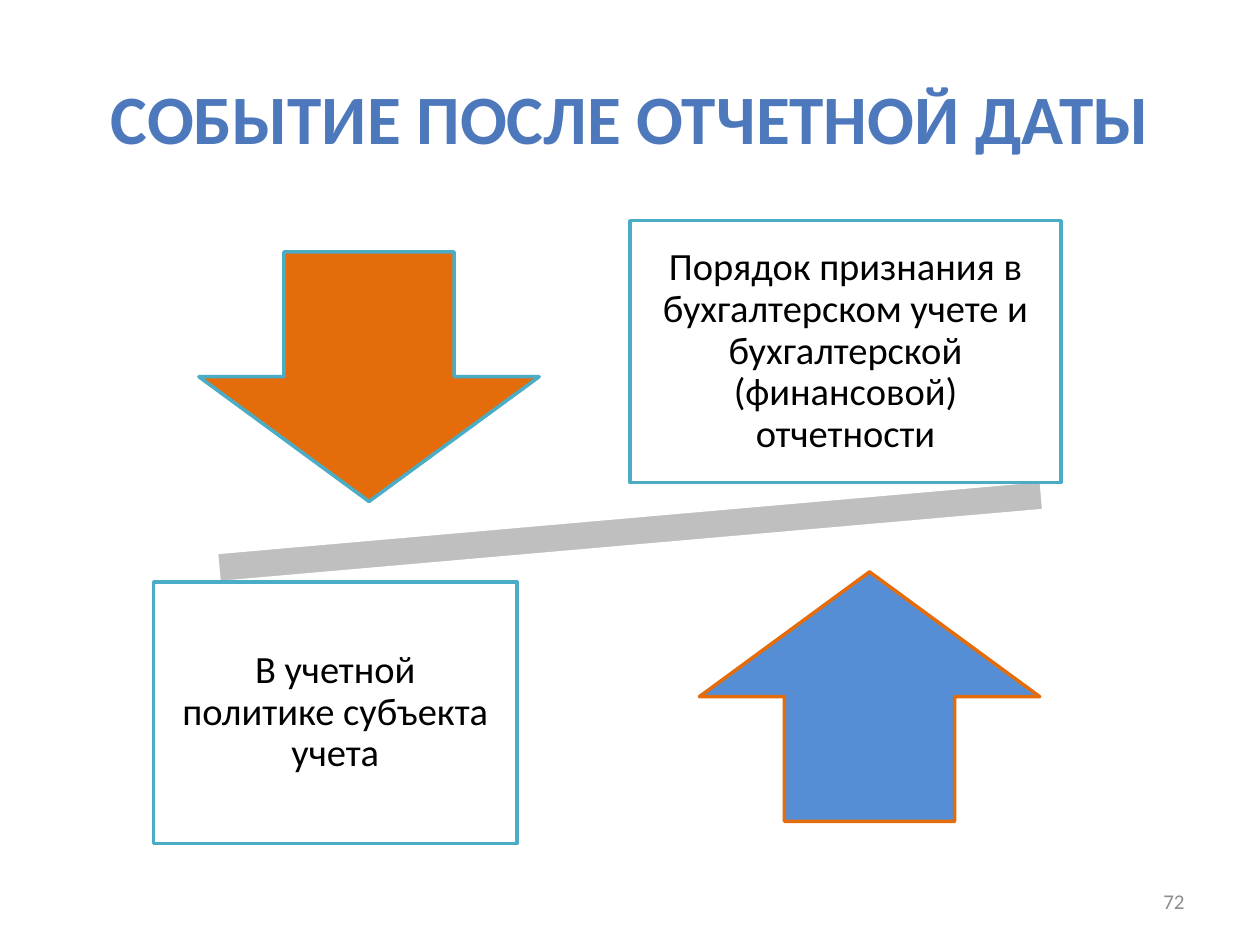
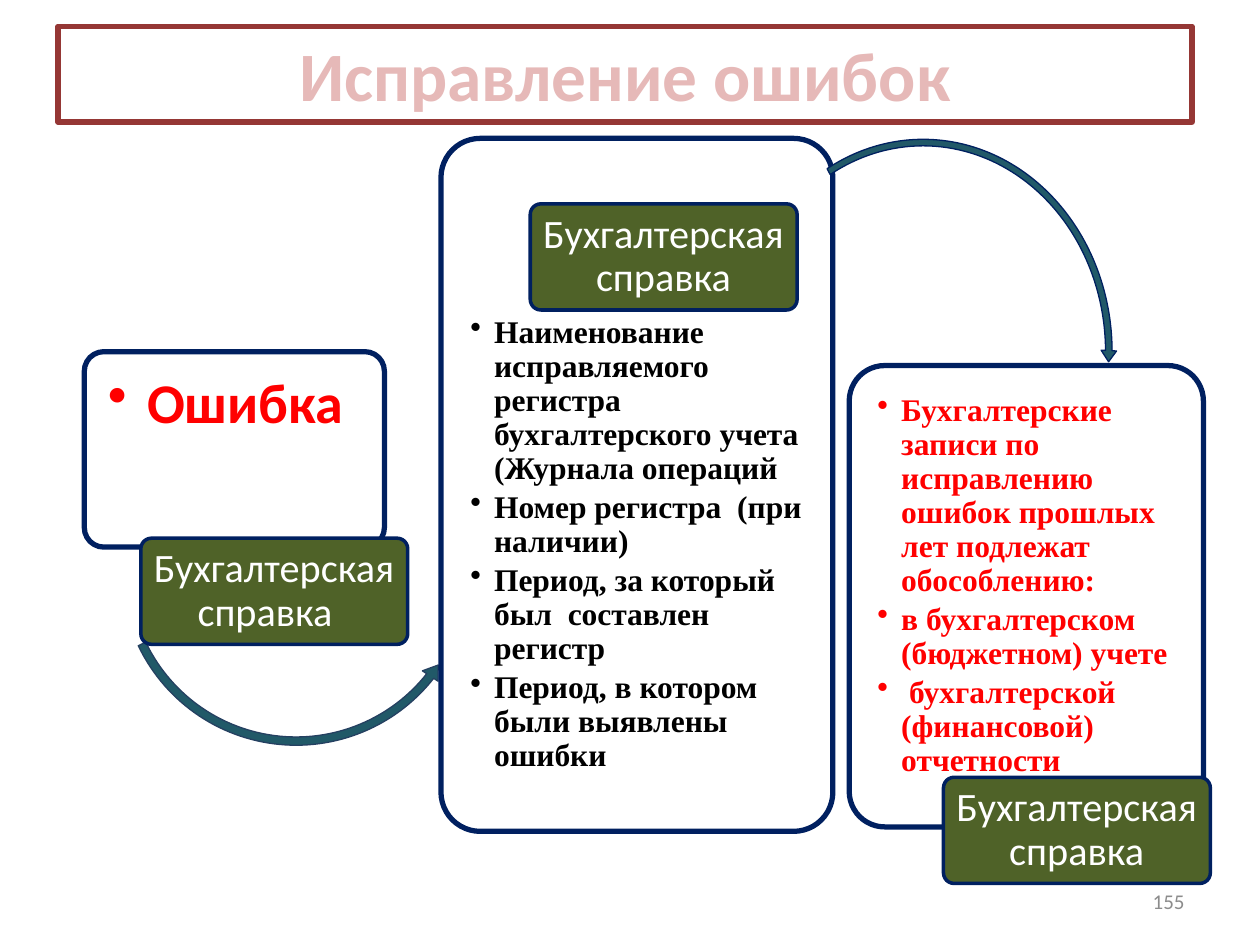
import dataclasses

import lxml.etree
import pptx
import pptx.dml.color
import pptx.enum.shapes
import pptx.enum.text
import pptx.oxml.ns
import pptx.util

Cm = pptx.util.Cm
Pt = pptx.util.Pt
Kind = pptx.enum.shapes.MSO_SHAPE
Align = pptx.enum.text.PP_ALIGN
Anchor = pptx.enum.text.MSO_ANCHOR


@dataclasses.dataclass(frozen=True)
class Theme:
    sans: str = "Calibri"
    serif: str = "Times New Roman"
    white: str = "FFFFFF"
    black: str = "000000"
    red: str = "FF0000"
    gray: str = "BFBFBF"
    dim: str = "8C8C8C"
    blue: str = "4D79BC"
    sky: str = "558ED5"
    aqua: str = "4BACC6"
    orange: str = "E46C0A"
    pink: str = "E6B9B8"
    wine: str = "953735"
    navy: str = "002060"
    slate: str = "254061"
    teal: str = "215968"
    green: str = "4F6228"
    title: float = 39.6
    error: float = 32
    label: float = 23
    body: float = 22
    item: float = 18
    number: float = 12


theme = Theme()


def draw(slide, kind, box, fill=None, line=None, width=2):
    shape = slide.shapes.add_shape(kind, *map(Cm, box))
    shape.shadow.inherit = False
    if fill:
        shape.fill.solid()
        shape.fill.fore_color.rgb = pptx.dml.color.RGBColor.from_string(fill)
    else:
        shape.fill.background()
    if line:
        shape.line.color.rgb = pptx.dml.color.RGBColor.from_string(line)
        shape.line.width = Pt(width)
    else:
        shape.line.fill.background()
    return shape


def write(shape, lines, size, color, font=theme.sans, bold=False, align=Align.CENTER,
          pad=(0.25, 0.13, 0.25, 0.13), space=1.0, hang=0):
    frame = shape.text_frame
    frame.word_wrap = True
    frame.vertical_anchor = Anchor.TOP if hang else Anchor.MIDDLE
    frame.margin_left, frame.margin_top, frame.margin_right, frame.margin_bottom = map(Cm, pad)
    frame.text = "\n".join(lines)
    for para in frame.paragraphs:
        para.alignment = Align.LEFT if hang else align
        para.line_spacing = space
        if hang:
            para.space_after = Pt(size * 0.16)
            props = para._p.get_or_add_pPr()
            props.set("marL", str(Cm(hang)))
            props.set("indent", str(-Cm(hang)))
            mark = lxml.etree.SubElement(props, pptx.oxml.ns.qn("a:buChar"))
            mark.set("char", "•")
        for run in para.runs:
            run.font.name = font
            run.font.size = Pt(size)
            run.font.bold = bold
            run.font.color.rgb = pptx.dml.color.RGBColor.from_string(color)


deck = pptx.Presentation()
deck.slide_width = Cm(25.4)
deck.slide_height = Cm(19.05)

heads = [
    ("СОБЫТИЕ ПОСЛЕ ОТЧЕТНОЙ ДАТЫ", (1.27, 0.76, 22.86, 3.18), theme.blue, None, "72"),
    ("Исправление ошибок", (1.17, 0.53, 22.86, 1.93), theme.pink, theme.wine, "155"),
]
slides = []
for title, box, color, line, number in heads:
    slide = deck.slides.add_slide(deck.slide_layouts[6])
    head = draw(slide, Kind.RECTANGLE, box, line=line, width=3)
    write(head, [title], theme.title, color, bold=True)
    foot = slide.shapes.add_textbox(*map(Cm, (18.21, 17.65, 5.92, 1.02)))
    write(foot, [number], theme.number, theme.dim, align=Align.RIGHT)
    slides.append(slide)
event, fixes = slides

beam = draw(event, Kind.MATH_MINUS, (1.35, 9.42, 22.71, 2.59), theme.gray, theme.white)
beam.rotation = 355
draw(event, Kind.DOWN_ARROW, (4.01, 5.08, 6.86, 5.03), theme.orange, theme.aqua)
draw(event, Kind.UP_ARROW, (14.1, 11.53, 6.86, 5.03), theme.sky, theme.orange)
for text, box in [
    ("Порядок признания в бухгалтерском учете и бухгалтерской (финансовой) отчетности",
     (12.7, 4.45, 8.69, 5.28)),
    ("В учетной политике субъекта учета", (3.1, 11.73, 7.32, 5.28)),
]:
    block = draw(event, Kind.RECTANGLE, box, theme.white, theme.aqua)
    write(block, [text], theme.body, theme.black, pad=(0.43,) * 4, space=0.9)

cards = [
    dict(box=(1.7, 7.09, 6.05, 3.94), top=0.36, hang=0.79,
         size=theme.error, color=theme.red, font=theme.sans, lines=["Ошибка"],
         label="Бухгалтерская справка  ", spot=(2.84, 10.85),
         arrow=(Kind.LEFT_CIRCULAR_ARROW, (2.34, 7.87, 7.26, 7.26), theme.slate,
                (0.023, 2.736, 22.932, 92.685, 0.026))),
    dict(box=(8.89, 2.79, 7.9, 13.97), top=3.35, hang=0.48,
         size=theme.item, color=theme.black, font=theme.serif,
         lines=["Наименование исправляемого регистра бухгалтерского учета (Журнала операций",
                "Номер регистра  (при наличии)",
                "Период, за который был  составлен регистр",
                "Период, в котором были выявлены ошибки"],
         label="Бухгалтерская справка", spot=(10.69, 4.11),
         arrow=(Kind.CIRCULAR_ARROW, (14.71, 2.72, 7.8, 8.74), theme.navy,
                (0.017, 2.073, 215.803, 145.386, 0.02))),
    dict(box=(17.12, 7.37, 7.14, 9.3), top=0.36, hang=0.48,
         size=theme.item, color=theme.red, font=theme.serif,
         lines=["Бухгалтерские записи по исправлению ошибок прошлых лет подлежат обособлению:",
                "в бухгалтерском (бюджетном) учете",
                " бухгалтерской (финансовой) отчетности"],
         label="Бухгалтерская справка", spot=(19.02, 15.67), arrow=None),
]
for card in cards:
    panel = draw(fixes, Kind.ROUNDED_RECTANGLE, card["box"], theme.white, theme.navy, 3)
    panel.adjustments[0] = 0.1
    write(panel, card["lines"], card["size"], card["color"], card["font"], True,
          pad=(0.36, card["top"], 0.36, 0.36), space=0.9, hang=card["hang"])
    if card["arrow"]:
        kind, box, line, turns = card["arrow"]
        arrow = draw(fixes, kind, box, theme.teal, line, 0.75)
        for i, turn in enumerate(turns):
            arrow.adjustments[i] = turn
    tag = draw(fixes, Kind.ROUNDED_RECTANGLE, (*card["spot"], 5.38, 2.14),
               theme.green, theme.navy)
    tag.adjustments[0] = 0.1
    write(tag, [card["label"]], theme.label, theme.white,
          pad=(0.13, 0.08, 0.13, 0.08), space=0.9)

deck.save("out.pptx")
